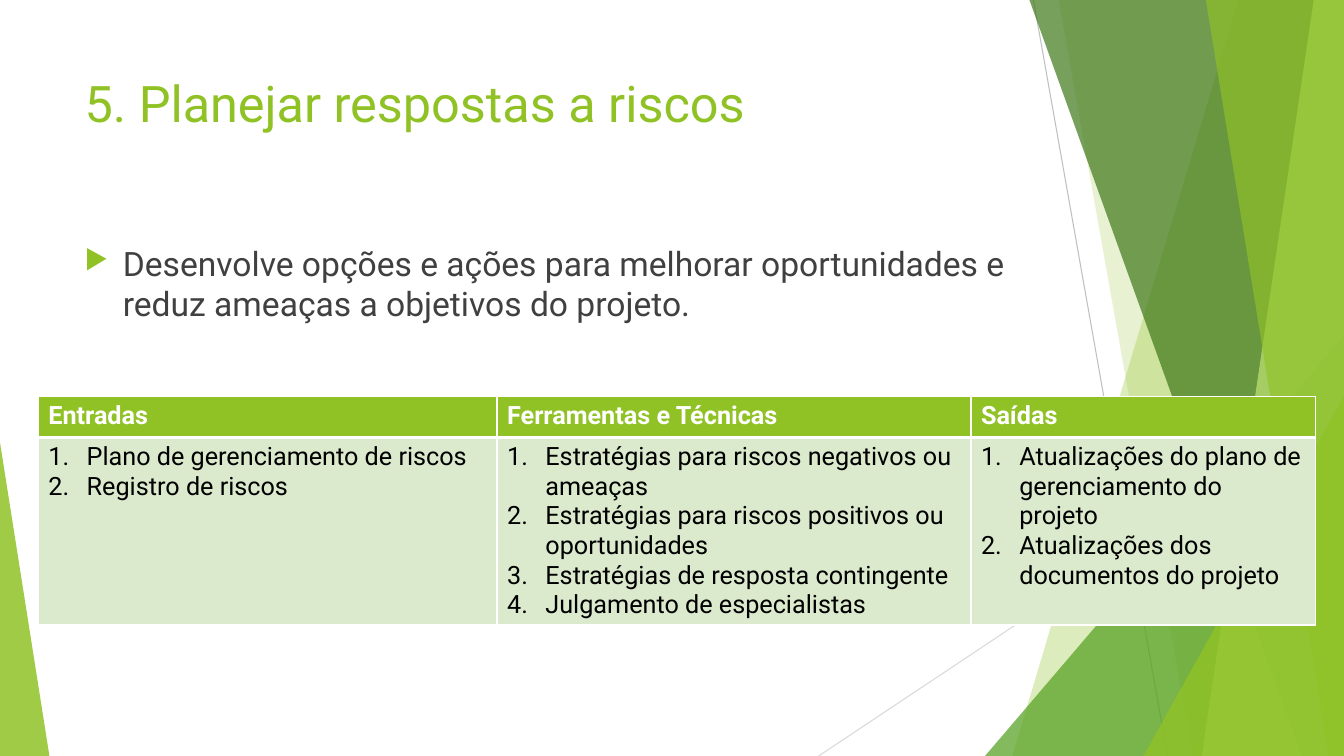
from lxml.etree import SubElement
from pptx import Presentation
from pptx.dml.color import RGBColor as RGB
from pptx.enum.shapes import MSO_CONNECTOR as Conn, MSO_SHAPE as Shape
from pptx.enum.text import MSO_ANCHOR as Anchor, MSO_AUTO_SIZE as Auto, PP_ALIGN as Align
from pptx.oxml import parse_xml
from pptx.oxml.ns import nsdecls, qn
from pptx.util import Inches, Pt

HUES = {
    "lime": "90C226", "leaf": "54A021", "moss": "3F7819", "pale": "C0E474",
    "mint": "DBE9CD", "ink": "404040", "black": "000000", "white": "FFFFFF",
    "gray": "BFBFBF", "mist": "D9D9D9",
}
WIDE, HIGH = 13.33, 7.5
FONT = "Roboto"

TABLE = [
    ("Entradas", 4.55, [
        "Plano de gerenciamento de riscos",
        "Registro de riscos",
    ]),
    ("Ferramentas e Técnicas", 4.7, [
        "Estratégias para riscos negativos ou ameaças",
        "Estratégias para riscos positivos ou oportunidades",
        "Estratégias de resposta contingente",
        "Julgamento de especialistas",
    ]),
    ("Saídas", 3.42, [
        "Atualizações do plano de gerenciamento do projeto",
        "Atualizações dos documentos do projeto",
    ]),
]


def tint(name):
    """Return the colour with the given name."""
    return RGB.from_string(HUES[name])


def write(para, text, size, hue, bold=False):
    """Add one styled run to a paragraph."""
    run = para.add_run()
    run.text = text
    font = run.font
    font.name, font.size, font.bold = FONT, Pt(size), bold
    font.color.rgb = tint(hue)


def indent(para):
    """Give a paragraph a hanging indent and return its properties."""
    props = para._p.get_or_add_pPr()
    props.set("marL", str(Inches(0.38)))
    props.set("indent", str(-Inches(0.38)))
    return props


def paint(shape, hue, alpha):
    """Fill a shape with a see-through colour and no outline."""
    shape.shadow.inherit = False
    shape.line.fill.background()
    shape.fill.solid()
    shape.fill.fore_color.rgb = tint(hue)
    color = shape.fill._xPr.find(".//" + qn("a:srgbClr"))
    SubElement(color, qn("a:alpha"), val=str(alpha * 1000))


def ray(slide, start, end, hue):
    """Draw a thin straight line."""
    line = slide.shapes.add_connector(
        Conn.STRAIGHT, *(Inches(n) for n in start + end))
    line.line.color.rgb = tint(hue)
    line.line.width = Pt(0.75)
    SubElement(line._element.spPr, qn("a:effectLst"))


def band(slide, top, foot, hue, alpha):
    """Draw a full-height panel that ends at the right edge."""
    spots = [(top, 0), (WIDE, 0), (WIDE, HIGH), (foot, HIGH)]
    spots = [(Inches(x), Inches(y)) for x, y in spots]
    form = slide.shapes.build_freeform(*spots[0])
    form.add_line_segments(spots[1:], close=True)
    paint(form.convert_to_shape(), hue, alpha)


def wedge(slide, left, right, top, tip, hue, alpha):
    """Draw a triangle that stands on the bottom edge."""
    shape = slide.shapes.add_shape(
        Shape.ISOSCELES_TRIANGLE, Inches(left), Inches(top),
        Inches(right - left), Inches(HIGH - top))
    shape.adjustments[0] = tip
    paint(shape, hue, alpha)


def facets(slide):
    """Draw the green panels at both sides of the slide."""
    ray(slide, (10.25, 0), (11.58, HIGH), "gray")
    ray(slide, (WIDE, 4.03), (8.12, HIGH), "mist")
    band(slide, 12.28, 10.04, "lime", 30)
    band(slide, 10.5, 11.83, "lime", 20)
    wedge(slide, 9.77, WIDE, 3.33, 1, "leaf", 72)
    band(slide, 10.21, 12.91, "moss", 70)
    band(slide, 13.03, 11.92, "pale", 70)
    band(slide, 11.96, 13.18, "lime", 65)
    wedge(slide, 11.34, WIDE, 3.93, 1, "lime", 80)
    wedge(slide, 0, 0.49, 4.39, 0, "lime", 85)


def place(shape, box):
    """Move a text shape into a box and return its first paragraph."""
    shape.left, shape.top, shape.width, shape.height = map(Inches, box)
    frame = shape.text_frame
    frame.word_wrap = True
    frame.auto_size = Auto.NONE
    frame.vertical_anchor = Anchor.TOP
    para = frame.paragraphs[0]
    para.alignment = Align.LEFT
    return para


def head(slide, box):
    """Fill the title placeholder."""
    para = place(slide.shapes.title, box)
    write(para, "5. Planejar respostas a riscos", 36, "lime")


def body(slide, box):
    """Add the bulleted sentence."""
    para = place(slide.shapes.add_textbox(0, 0, 0, 0), box)
    props = indent(para)
    color = SubElement(props, qn("a:buClr"))
    SubElement(color, qn("a:srgbClr"), val=HUES["lime"])
    SubElement(props, qn("a:buSzPct"), val="80000")
    SubElement(props, qn("a:buChar"), char="▶")
    write(para, "Desenvolve opções e ações para melhorar oportunidades e "
                "reduz ameaças a objetivos do projeto.", 24, "ink")


def dress(cell, hue, **wide):
    """Set the fill and the white borders of a cell."""
    cell.fill.solid()
    cell.fill.fore_color.rgb = tint(hue)
    props = cell._tc.get_or_add_tcPr()
    for spot, side in enumerate("LRTB"):
        size = Pt(wide.get(side, 1))
        props.insert(spot, parse_xml(
            f'<a:ln{side} {nsdecls("a")} w="{size}"><a:solidFill>'
            f'<a:srgbClr val="{HUES["white"]}"/></a:solidFill></a:ln{side}>'))


def grid(slide, box):
    """Add the table of inputs, tools and outputs."""
    table = slide.shapes.add_table(2, len(TABLE), *map(Inches, box)).table
    table.horz_banding = False
    table.rows[0].height = Inches(0.41)
    table.rows[1].height = Inches(box[3] - 0.41)
    for col, (name, width, items) in enumerate(TABLE):
        table.columns[col].width = Inches(width)
        top, cell = table.cell(0, col), table.cell(1, col)
        dress(top, "lime", B=3)
        dress(cell, "mint", T=3)
        write(top.text_frame.paragraphs[0], name, 18, "white", True)
        frame = cell.text_frame
        for row, item in enumerate(items):
            para = frame.add_paragraph() if row else frame.paragraphs[0]
            SubElement(indent(para), qn("a:buAutoNum"), type="arabicPeriod")
            write(para, item, 18, "black")


def main():
    """Build and save the slide."""
    deck = Presentation()
    deck.slide_width, deck.slide_height = Inches(WIDE), Inches(HIGH)
    slide = deck.slides.add_slide(deck.slide_layouts[5])
    facets(slide)
    head(slide, (0.74, 0.67, 9.4, 1.44))
    body(slide, (0.74, 2.36, 9.4, 1.41))
    grid(slide, (0.38, 3.93, 12.67, 2.27))
    deck.save("out.pptx")


if __name__ == "__main__":
    main()
